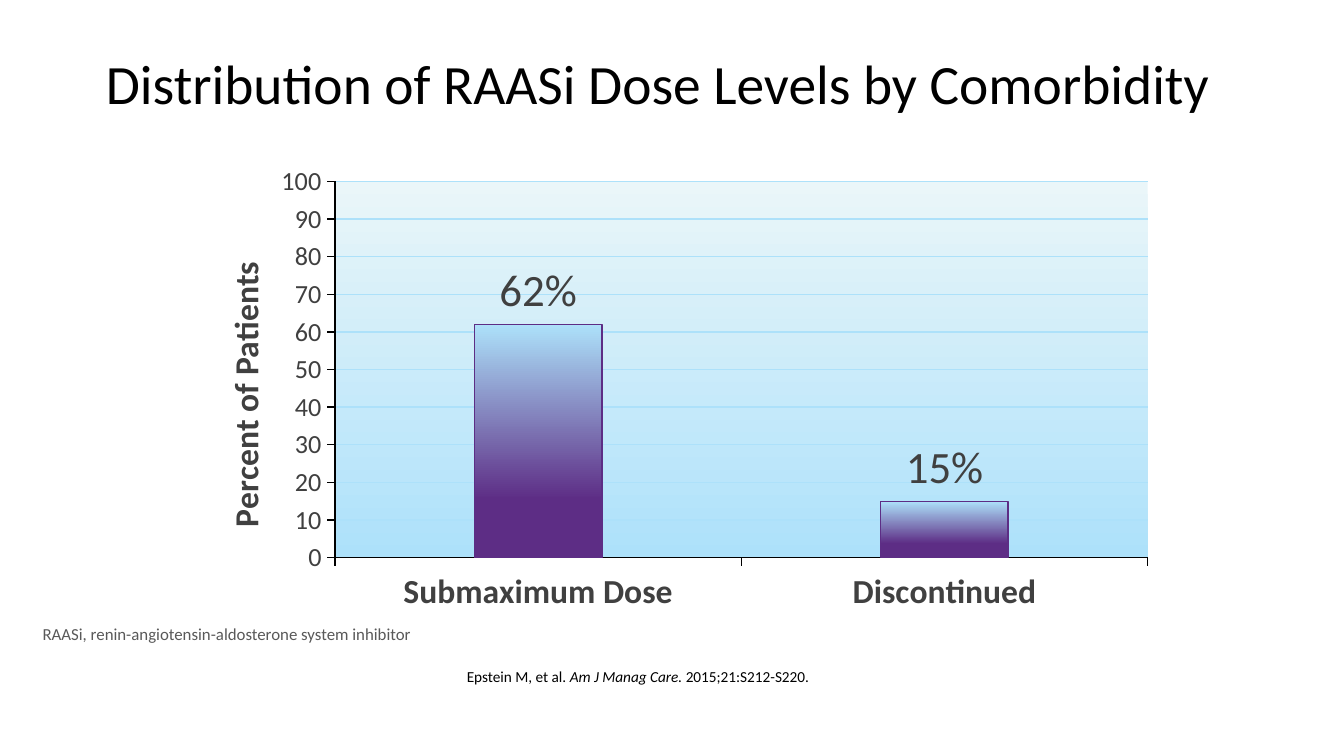
from dataclasses import dataclass

from pptx import Presentation
from pptx.chart.data import CategoryChartData
from pptx.dml.color import RGBColor
from pptx.enum.chart import XL_CHART_TYPE, XL_LABEL_POSITION, XL_TICK_MARK
from pptx.enum.text import MSO_ANCHOR, PP_ALIGN
from pptx.oxml import parse_xml
from pptx.oxml.ns import nsdecls, qn
from pptx.util import Emu, Pt

COLUMN = XL_CHART_TYPE.COLUMN_CLUSTERED
OUTSIDE = XL_TICK_MARK.OUTSIDE
ABOVE = XL_LABEL_POSITION.OUTSIDE_END
LEFT, TOP, MIDDLE = PP_ALIGN.LEFT, MSO_ANCHOR.TOP, MSO_ANCHOR.MIDDLE

PX = 9525  # EMU in one px, 96 px to the inch
FACE = "Calibri"
BLACK, GREY, DARK = "000000", "595959", "404040"
PALE, SKY, PURPLE = "EAF6F9", "ADE1FA", "5D2D85"


@dataclass
class Box:
    x: int
    y: int
    w: int
    h: int

    def emu(self) -> tuple:
        return tuple(Emu(v * PX) for v in (self.x, self.y, self.w, self.h))


@dataclass
class Note:
    box: Box
    runs: list  # (text, italic)
    size: float
    color: str
    lead: float = 0.9
    anchor: int = TOP


TITLE = Note(Box(66, 9, 828, 105),
             [("Distribution of RAASi Dose Levels by Comorbidity", False)],
             29.7, BLACK, anchor=MIDDLE)
NOTES = [
    Note(Box(324, 473, 616, 58),
         [("Epstein M, et al. ", False), ("Am J Manag Care.", True),
          (" 2015;21:S212-S220.", False)], 8.2, BLACK),
    Note(Box(21, 445, 920, 21),
         [("RAASi, renin-angiotensin-aldosterone system inhibitor", False)],
         9, GREY, lead=0.7),
]
DOSES = {"Submaximum Dose": 62, "Discontinued": 15}


def rgb(code: str) -> RGBColor:
    return RGBColor.from_string(code)


def style(font, size: float, color: str, bold: bool = False) -> None:
    font.name, font.size, font.bold = FACE, Pt(size), bold
    font.color.rgb = rgb(color)


def write(shape, note: Note) -> None:
    shape.left, shape.top, shape.width, shape.height = note.box.emu()
    frame = shape.text_frame
    frame.word_wrap = True
    frame.vertical_anchor = note.anchor
    para = frame.paragraphs[0]
    para.alignment, para.line_spacing = LEFT, note.lead
    for text, italic in note.runs:
        run = para.add_run()
        run.text = text
        style(run.font, note.size, note.color)
        run.font.italic = italic


def stroke(line, color: str) -> None:
    line.color.rgb = rgb(color)
    line.width = Pt(0.75)


def shade(props, top: str, base: str, end: int) -> None:
    """Fill from top to base colour, reached at end percent."""
    stops = "".join(
        f'<a:gs pos="{pos * 1000}"><a:srgbClr val="{color}"/></a:gs>'
        for pos, color in ((0, top), (end, base)))
    props.insert(0, parse_xml(
        f'<a:gradFill {nsdecls("a")} rotWithShape="1"><a:gsLst>{stops}</a:gsLst>'
        '<a:lin ang="5400000" scaled="0"/></a:gradFill>'))


def place(part, index: int, inner: bool = False, **spots: float) -> None:
    """Pin a chart part at fractions of the chart area."""
    for old in part.findall(qn("c:layout")):
        part.remove(old)
    tags = '<c:layoutTarget val="inner"/>' if inner else ""
    tags += "".join(f'<c:{key}Mode val="edge"/>' for key in "xy")
    tags += "".join(f'<c:{key} val="{val}"/>' for key, val in spots.items())
    part.insert(index, parse_xml(
        f'<c:layout {nsdecls("c")}><c:manualLayout>{tags}'
        '</c:manualLayout></c:layout>'))


def draw_chart(slide, box: Box) -> None:
    data = CategoryChartData(number_format='0"%"')
    data.categories = list(DOSES)
    data.add_series("Series 1", list(DOSES.values()))
    chart = slide.shapes.add_chart(COLUMN, *box.emu(), data).chart
    chart.has_legend = chart.has_title = False
    style(chart.font, 14, BLACK)

    # Axes
    cat, val = chart.category_axis, chart.value_axis
    for axis, size, bold in ((cat, 18, True), (val, 14, False)):
        style(axis.tick_labels.font, size, DARK, bold)
        axis.major_tick_mark = OUTSIDE
        stroke(axis.format.line, BLACK)
    val.minimum_scale, val.maximum_scale, val.major_unit = 0, 100, 10
    val.tick_labels.number_format = "0"
    val.tick_labels.number_format_is_linked = False
    stroke(val.major_gridlines.format.line, SKY)
    head = val.axis_title
    run = head.text_frame.paragraphs[0].add_run()
    run.text = "Percent of Patients"
    style(run.font, 18, DARK, True)
    place(head._element, 1, x=0.04, y=0.21)

    # Columns and their labels
    plot = chart.plots[0]
    plot.vary_by_categories = False
    plot.gap_width, plot.overlap = 219, -27
    bars = plot.series[0]
    stroke(bars.format.line, PURPLE)
    shade(bars._element.find(qn("c:spPr")), SKY, PURPLE, 75)
    labels = bars.data_labels
    labels.show_value, labels.position = True, ABOVE
    labels.number_format, labels.number_format_is_linked = '0"%"', False
    style(labels.font, 24, DARK)

    # Plot area
    area = chart._chartSpace.chart.plotArea
    place(area, 0, True, x=0.16, y=0.05, w=0.82, h=0.81)
    props = parse_xml(f'<c:spPr {nsdecls("c", "a")}/>')
    shade(props, PALE, SKY, 100)
    area.append(props)


def main() -> None:
    deck = Presentation()
    deck.slide_width, deck.slide_height = Emu(960 * PX), Emu(540 * PX)
    slide = deck.slides.add_slide(deck.slide_layouts[5])
    write(slide.shapes.title, TITLE)
    for note in NOTES:
        write(slide.shapes.add_textbox(*note.box.emu()), note)
    draw_chart(slide, Box(126, 113, 708, 332))
    deck.save("out.pptx")


if __name__ == "__main__":
    main()
